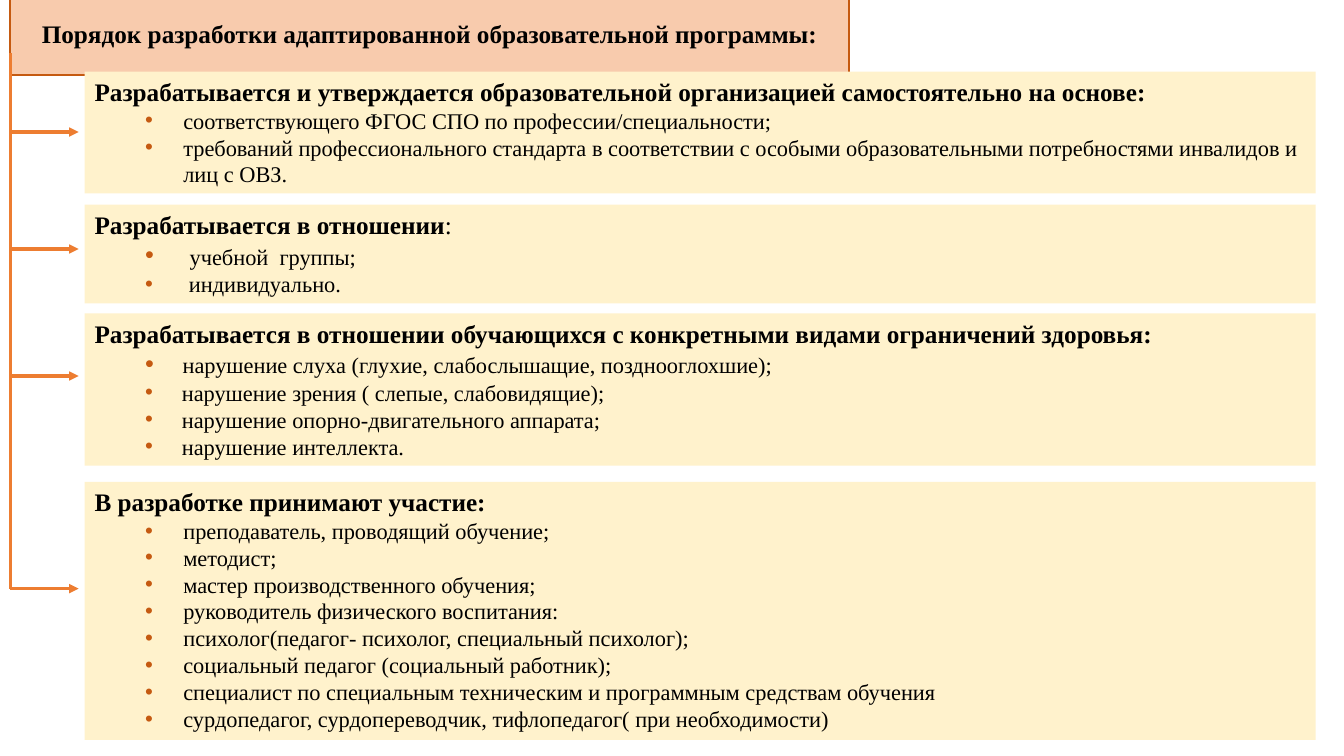
from dataclasses import dataclass

from lxml import etree
from pptx import Presentation
from pptx.dml.color import RGBColor
from pptx.enum import shapes, text
from pptx.oxml import ns
from pptx.util import Inches, Pt


@dataclass(frozen=True)
class Theme:
    """Colours, font and type sizes of the slide."""
    peach: str = "F8CBAD"
    rust: str = "C55A11"
    cream: str = "FFF2CC"
    orange: str = "ED7D31"
    ink: str = "000000"
    font: str = "Times New Roman"
    head: int = 18
    body: int = 16


THEME = Theme()
TITLE = "Порядок разработки адаптированной образовательной программы:"
LEFT, WIDTH = 0.84, 12.21
TRUNK, TIP = 0.1, 0.78

# top, height, arrow height, bullet margin, bullet hang, heading runs, bullets
PANELS = [
    (0.71, 1.21, 1.31, 0.88, 0.38,
     ["Разрабатывается и утверждается образовательной организацией самостоятельно на основе:"],
     ["соответствующего ФГОС СПО по профессии/специальности;",
      "требований профессионального стандарта в соответствии с особыми "
      "образовательными потребностями инвалидов и лиц с ОВЗ."]),
    (2.03, 0.98, 2.47, 0.88, 0.38,
     ["Разрабатывается в отношении", ":"],
     [" учебной  группы;", " индивидуально."]),
    (3.11, 1.51, 3.73, 0.81, 0.31,
     ["Разрабатывается в отношении обучающихся с конкретными видами ограничений здоровья:"],
     [" нарушение слуха (глухие, слабослышащие, позднооглохшие);",
      " нарушение зрения ( слепые, слабовидящие);",
      " нарушение опорно-двигательного аппарата;",
      " нарушение интеллекта."]),
    (4.78, 2.56, 5.84, 0.88, 0.38,
     ["В разработке принимают участие:"],
     ["преподаватель, проводящий обучение;",
      "методист;",
      "мастер производственного обучения;",
      "руководитель физического воспитания:",
      "психолог(педагог- психолог, специальный психолог);",
      "социальный педагог (социальный работник);",
      "специалист по специальным техническим и программным средствам обучения",
      "сурдопедагог, сурдопереводчик, тифлопедагог( при необходимости)"]),
]


def color(name):
    """Turn a hex string into a colour."""
    return RGBColor.from_string(name)


def add_run(para, words, size, bold=False):
    """Append one styled run."""
    run = para.add_run()
    run.text = words
    font = run.font
    font.name, font.size, font.bold = THEME.font, Pt(size), bold
    font.color.rgb = color(THEME.ink)


def set_bullet(para, margin, hang):
    """Give a paragraph a coloured bullet and a hanging indent."""
    para.level = 1
    props = para._p.get_or_add_pPr()
    props.set("marL", str(Inches(margin)))
    props.set("indent", str(-Inches(hang)))
    tint = etree.SubElement(props, ns.qn("a:buClr"))
    etree.SubElement(tint, ns.qn("a:srgbClr"), val=THEME.rust)
    etree.SubElement(props, ns.qn("a:buFont"), typeface="Arial")
    etree.SubElement(props, ns.qn("a:buChar"), char="•")


def set_frame(shape, fill, anchor):
    """Fill a shape and set up its text frame."""
    shape.fill.solid()
    shape.fill.fore_color.rgb = color(fill)
    frame = shape.text_frame
    frame.word_wrap = True
    frame.auto_size = text.MSO_AUTO_SIZE.SHAPE_TO_FIT_TEXT
    frame.vertical_anchor = anchor
    return frame


def add_title(slide):
    """Place and format the title bar."""
    bar = slide.shapes.title
    bar.left, bar.top = Inches(TRUNK), Inches(0.13)
    bar.width, bar.height = Inches(8.32), Inches(0.4)
    bar.line.color.rgb = color(THEME.rust)
    bar.line.width = Pt(1.5)
    frame = set_frame(bar, THEME.peach, text.MSO_ANCHOR.MIDDLE)
    para = frame.paragraphs[0]
    para.alignment = text.PP_ALIGN.CENTER
    add_run(para, TITLE, THEME.head, True)


def add_panel(slide, top, height, margin, hang, heading, items):
    """Add one cream panel with a heading and bullets."""
    box = slide.shapes.add_shape(
        shapes.MSO_SHAPE.RECTANGLE, Inches(LEFT), Inches(top), Inches(WIDTH), Inches(height))
    box.shadow.inherit = False
    box.line.fill.background()
    frame = set_frame(box, THEME.cream, text.MSO_ANCHOR.TOP)
    para = frame.paragraphs[0]
    para.alignment = text.PP_ALIGN.LEFT
    for order, words in enumerate(heading):
        add_run(para, words, THEME.head, order == 0)
    for order, item in enumerate(items):
        para = frame.add_paragraph()
        para.alignment = text.PP_ALIGN.LEFT
        set_bullet(para, margin, hang)
        if order == 0 and item.startswith(" "):
            add_run(para, " ", THEME.head)
            item = item[1:]
        add_run(para, item, THEME.body)


def add_line(group, start, end, arrow=False):
    """Add a straight orange line, with an arrowhead on request."""
    line = group.shapes.add_connector(
        shapes.MSO_CONNECTOR.STRAIGHT, *(Inches(n) for n in start + end))
    line.line.color.rgb = color(THEME.orange)
    line.line.width = Pt(2.25)
    if arrow:
        etree.SubElement(line.line._get_or_add_ln(), ns.qn("a:tailEnd"), type="triangle")
    etree.SubElement(line._element.spPr, ns.qn("a:effectLst"))


def main():
    """Build and save the slide."""
    deck = Presentation()
    deck.slide_width, deck.slide_height = Inches(13.33), Inches(7.5)
    slide = deck.slides.add_slide(deck.slide_layouts.get_by_name("Title Only"))
    add_title(slide)
    for top, height, _, *rest in PANELS:
        add_panel(slide, top, height, *rest)
    stops = [panel[2] for panel in PANELS]
    group = slide.shapes.add_group_shape()
    add_line(group, (TRUNK, 0.53), (TRUNK, stops[-1]))
    for stop in stops:
        add_line(group, (TRUNK, stop), (TIP, stop), True)
    deck.save("out.pptx")


if __name__ == "__main__":
    main()
